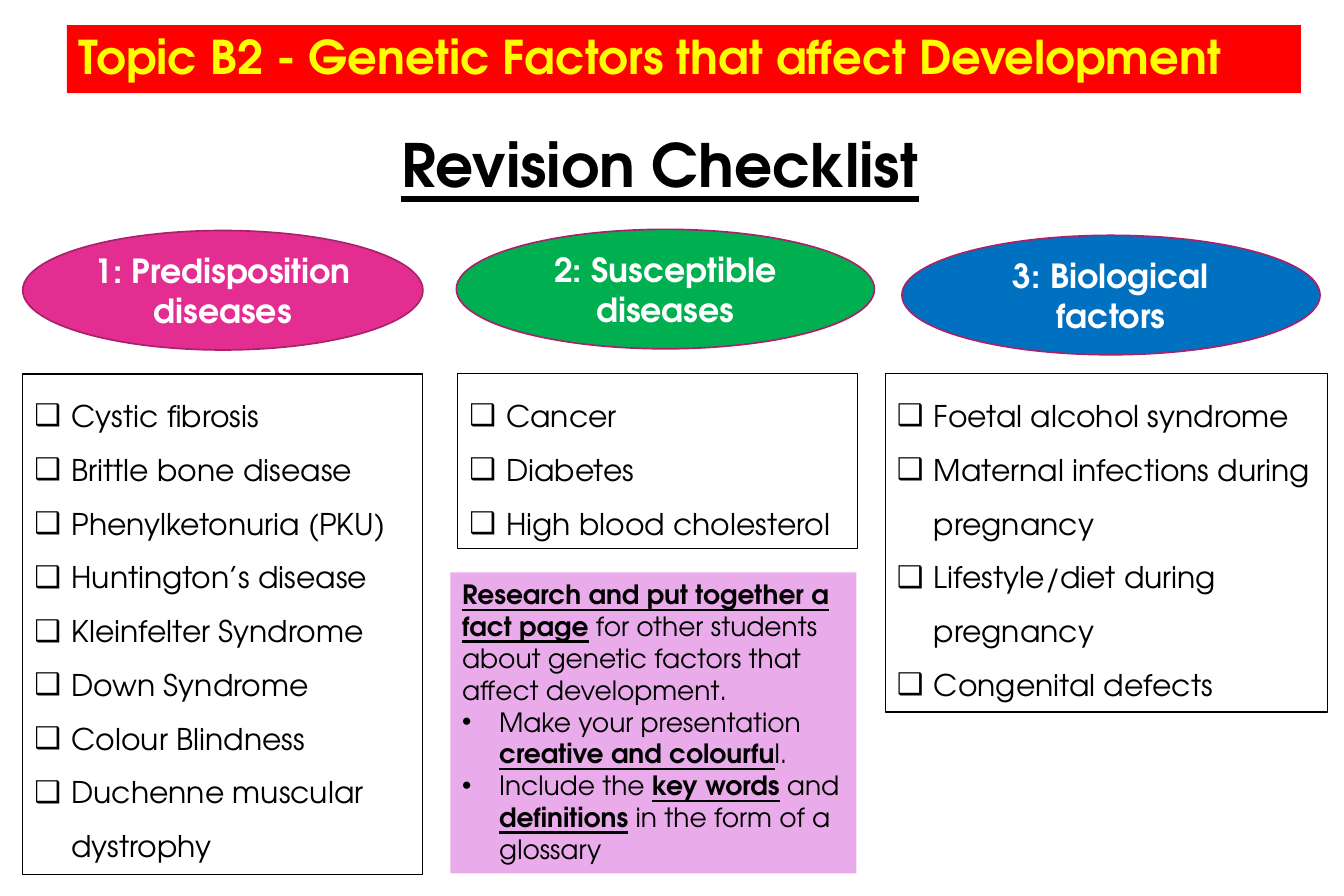
from lxml.etree import SubElement
from pptx import Presentation
from pptx.dml.color import RGBColor
from pptx.enum.shapes import MSO_SHAPE
from pptx.enum.text import MSO_ANCHOR, MSO_AUTO_SIZE, PP_ALIGN
from pptx.oxml.ns import qn
from pptx.util import Inches, Pt

FONT = "TeX Gyre Adventor"
BLACK = RGBColor(0x00, 0x00, 0x00)
WHITE = RGBColor(0xFF, 0xFF, 0xFF)
RED = RGBColor(0xFF, 0x00, 0x00)
YELLOW = RGBColor(0xFF, 0xFF, 0x00)
PINK = RGBColor(0xE3, 0x2D, 0x91)
GREEN = RGBColor(0x00, 0xB0, 0x50)
BLUE = RGBColor(0x00, 0x70, 0xC0)
PLUM = RGBColor(0xA8, 0x21, 0x6B)
LILAC = RGBColor(0xEA, 0xAB, 0xEB)

TOPICS = [
    ("1: Predisposition diseases", PINK, (0.19, 1.93, 3.35, 1)),
    ("2: Susceptible diseases", GREEN, (3.82, 1.92, 3.5, 1)),
    ("3: Biological factors", BLUE, (7.55, 1.97, 3.5, 1)),
]
CHECKLISTS = [
    ((0.19, 3.13, 3.35, 4.19), [
        "Cystic fibrosis", "Brittle bone disease", "Phenylketonuria (PKU)",
        "Huntington’s disease", "Kleinfelter Syndrome", "Down Syndrome",
        "Colour Blindness", "Duchenne muscular dystrophy",
    ]),
    ((3.83, 3.13, 3.35, 1.46), ["Cancer", "Diabetes", "High blood cholesterol"]),
    ((7.41, 3.13, 3.7, 2.83), [
        "Foetal alcohol syndrome", "Maternal infections during pregnancy",
        "Lifestyle/diet during pregnancy", "Congenital defects",
    ]),
]
# Each task paragraph: bullet, then (text, emphasised) pieces
TASK = [
    (None, [
        ("Research and put together a fact page", True),
        (" for other students about genetic factors that affect development.", False),
    ]),
    ("•", [
        ("Make your presentation ", False),
        ("creative and colourfu", True),
        ("l.", False),
    ]),
    ("•", [
        ("Include the ", False),
        ("key words", True),
        (" and ", False),
        ("definitions", True),
        (" in the form of a glossary", False),
    ]),
]


def add_box(slide, kind, place, fill=None, line=None, width=1, anchor=MSO_ANCHOR.TOP):
    """Add a preset shape; without a fill or line colour that part stays empty."""
    shape = slide.shapes.add_shape(kind, *map(Inches, place))
    shape.shadow.inherit = False
    if fill is None:
        shape.fill.background()
    else:
        shape.fill.solid()
        shape.fill.fore_color.rgb = fill
    if line is None:
        shape.line.fill.background()
    else:
        shape.line.color.rgb = line
        shape.line.width = Pt(width)
    shape.text_frame.word_wrap = True
    shape.text_frame.vertical_anchor = anchor
    return shape


def add_run(paragraph, text, size, color=BLACK, bold=False, underline=False):
    run = paragraph.add_run()
    run.text = text
    formats = {"name": FONT, "size": Pt(size), "bold": bold, "underline": underline}
    for name, value in formats.items():
        setattr(run.font, name, value)
    run.font.color.rgb = color


def add_paragraph(frame, index, align=PP_ALIGN.LEFT, spacing=1.0, bullet=None):
    """Return paragraph number index, reusing the one a new frame already has."""
    paragraph = frame.add_paragraph() if index else frame.paragraphs[0]
    paragraph.alignment = align
    paragraph.line_spacing = spacing
    if bullet:
        properties = paragraph._p.get_or_add_pPr()
        properties.set("marL", str(Inches(0.31)))
        properties.set("indent", str(-Inches(0.31)))
        SubElement(properties, qn("a:buFont")).set("typeface", "Arial")
        SubElement(properties, qn("a:buChar")).set("char", bullet)
    return paragraph


def add_title(slide):
    banner = add_box(slide, MSO_SHAPE.RECTANGLE, (0.56, 0.21, 10.33, 0.57),
                     fill=RED, anchor=MSO_ANCHOR.MIDDLE)
    paragraph = add_paragraph(banner.text_frame, 0, spacing=0.9)
    add_run(paragraph, "Topic B2 - Genetic Factors that affect Development",
            28, YELLOW, bold=True)


def add_heading(slide):
    heading = slide.shapes.add_textbox(*map(Inches, (0.47, 1.02, 10.11, 0.71)))
    heading.text_frame.word_wrap = True
    heading.text_frame.auto_size = MSO_AUTO_SIZE.SHAPE_TO_FIT_TEXT
    paragraph = add_paragraph(heading.text_frame, 0, PP_ALIGN.CENTER)
    add_run(paragraph, "Revision Checklist", 36, bold=True, underline=True)


def add_topic(slide, text, color, place):
    ellipse = add_box(slide, MSO_SHAPE.OVAL, place, color, PLUM,
                      anchor=MSO_ANCHOR.MIDDLE)
    paragraph = add_paragraph(ellipse.text_frame, 0, PP_ALIGN.CENTER)
    add_run(paragraph, text, 20, WHITE, bold=True)


def add_checklist(slide, place, items):
    box = add_box(slide, MSO_SHAPE.RECTANGLE, place, line=BLACK, width=0.75)
    box.text_frame.auto_size = MSO_AUTO_SIZE.SHAPE_TO_FIT_TEXT
    for index, item in enumerate(items):
        paragraph = add_paragraph(box.text_frame, index, spacing=1.5, bullet="❑")
        add_run(paragraph, item, 18)


def add_task(slide):
    box = add_box(slide, MSO_SHAPE.RECTANGLE, (3.77, 4.79, 3.4, 2.52), fill=LILAC)
    box.text_frame.auto_size = MSO_AUTO_SIZE.SHAPE_TO_FIT_TEXT
    for index, (bullet, pieces) in enumerate(TASK):
        paragraph = add_paragraph(box.text_frame, index, bullet=bullet)
        for text, emphasised in pieces:
            add_run(paragraph, text, 16, bold=emphasised, underline=emphasised)


def main():
    presentation = Presentation()
    presentation.slide_width = Inches(11.25)
    presentation.slide_height = Inches(7.5)
    slide = presentation.slides.add_slide(presentation.slide_layouts[6])
    add_title(slide)
    for text, color, place in TOPICS:
        add_topic(slide, text, color, place)
    add_heading(slide)
    for place, items in CHECKLISTS:
        add_checklist(slide, place, items)
    add_task(slide)
    presentation.save("out.pptx")


if __name__ == "__main__":
    main()
